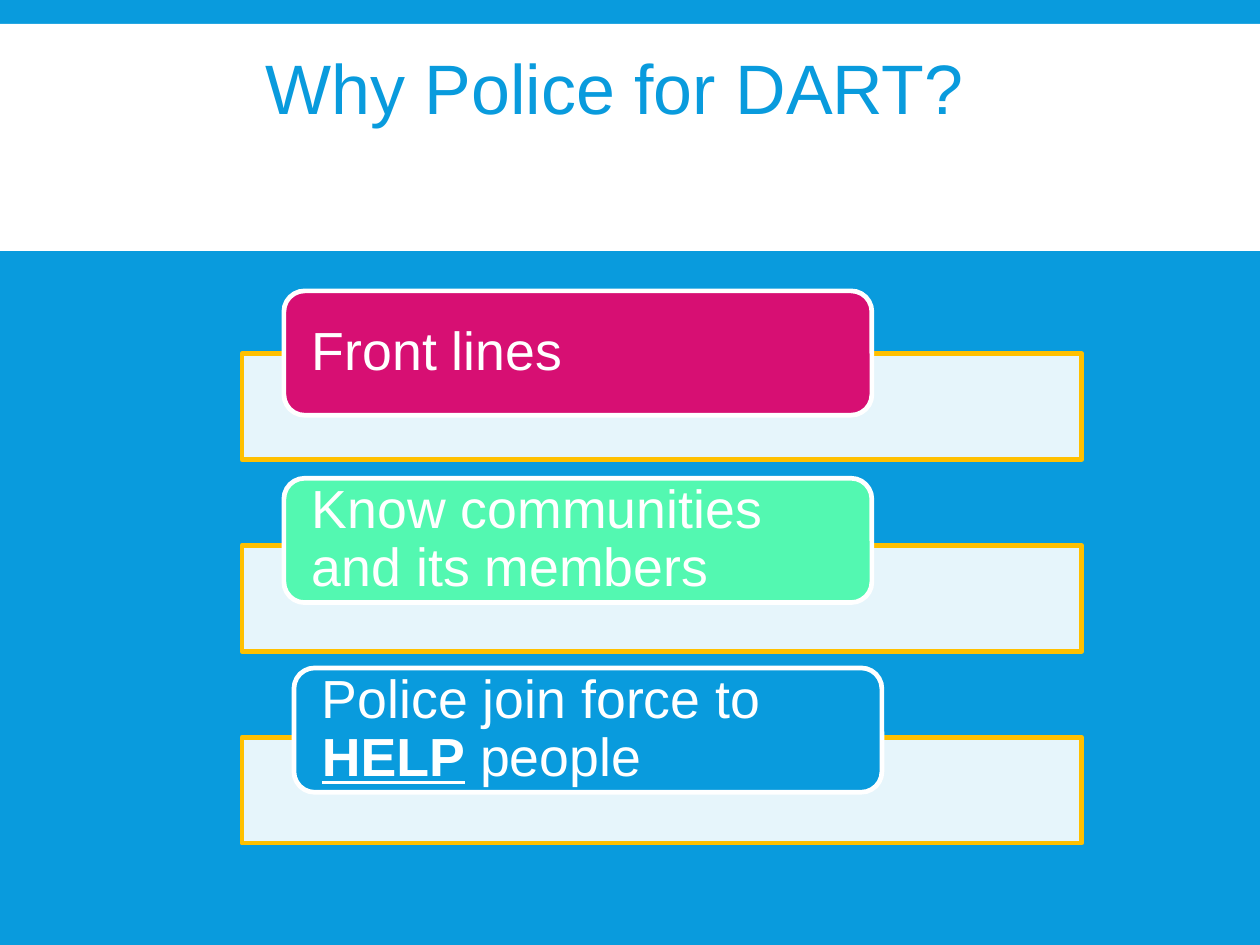
from lxml import etree
from pptx import Presentation
from pptx.dml import color
from pptx.enum import shapes, text
from pptx.oxml import ns
from pptx.util import Pt

BLUE, WHITE, GOLD = "099BDD", "FFFFFF", "FFC000"


def add_block(kind, left, top, width, height, fill, line=None):
    block = page.shapes.add_shape(kind, Pt(left), Pt(top), Pt(width), Pt(height))
    block.shadow.inherit = False
    block.fill.solid()
    block.fill.fore_color.rgb = color.RGBColor.from_string(fill)
    if line:
        block.line.color.rgb = color.RGBColor.from_string(line)
        block.line.width = Pt(2)
    else:
        block.line.fill.background()
    return block


def write(box, words, size, ink, align, margins, strong=None):
    frame = box.text_frame
    frame.word_wrap = True
    frame.auto_size = text.MSO_AUTO_SIZE.NONE
    frame.vertical_anchor = text.MSO_ANCHOR.MIDDLE
    frame.margin_left, frame.margin_top, frame.margin_right, frame.margin_bottom = map(Pt, margins)
    para = frame.paragraphs[0]
    para.alignment = align
    para.line_spacing = 0.9
    for part in words:
        span = para.add_run()
        span.text = part
        span.font.name = "Arial"
        span.font.size = Pt(size)
        span.font.color.rgb = color.RGBColor.from_string(ink)
        span.font.bold = span.font.underline = part == strong


deck = Presentation()
deck.slide_width, deck.slide_height = Pt(540), Pt(405)
page = deck.slides.add_slide(deck.slide_layouts[5])
page.background.fill.solid()
page.background.fill.fore_color.rgb = color.RGBColor.from_string(BLUE)

title = page.shapes.title
title.left, title.top, title.width, title.height = Pt(23), Pt(21), Pt(486), Pt(39.5)
write(title, ["Why Police for DART?"], size=30, ink=BLUE,
      align=text.PP_ALIGN.CENTER, margins=(0, 0, 5, 3))
band = add_block(shapes.MSO_SHAPE.RECTANGLE, 0, 10.2, 540, 97.3, WHITE)
title.element.addprevious(band.element)

reasons = [
    (121.7, 124.7, "D70F73", ["Front lines"]),
    (121.7, 205, "53F8B1", ["Know communities and its members"]),
    (126, 286.3, BLUE, ["Police join force to ", "HELP", " people"]),
]
for row, (left, top, fill, words) in enumerate(reasons):
    bar = add_block(shapes.MSO_SHAPE.RECTANGLE, 103.7, 151.6 + 82.2 * row, 360, 45.4, WHITE, GOLD)
    tint = bar.element.spPr.find(ns.qn("a:solidFill")).find(ns.qn("a:srgbClr"))
    etree.SubElement(tint, ns.qn("a:alpha"), val="90000")
    label = add_block(shapes.MSO_SHAPE.ROUNDED_RECTANGLE, left, top, 252, 53.3, fill, WHITE)
    write(label, words, size=23, ink=WHITE, align=text.PP_ALIGN.LEFT,
          margins=(9.4, 0, 9.4, 0), strong="HELP")

deck.save("out.pptx")
